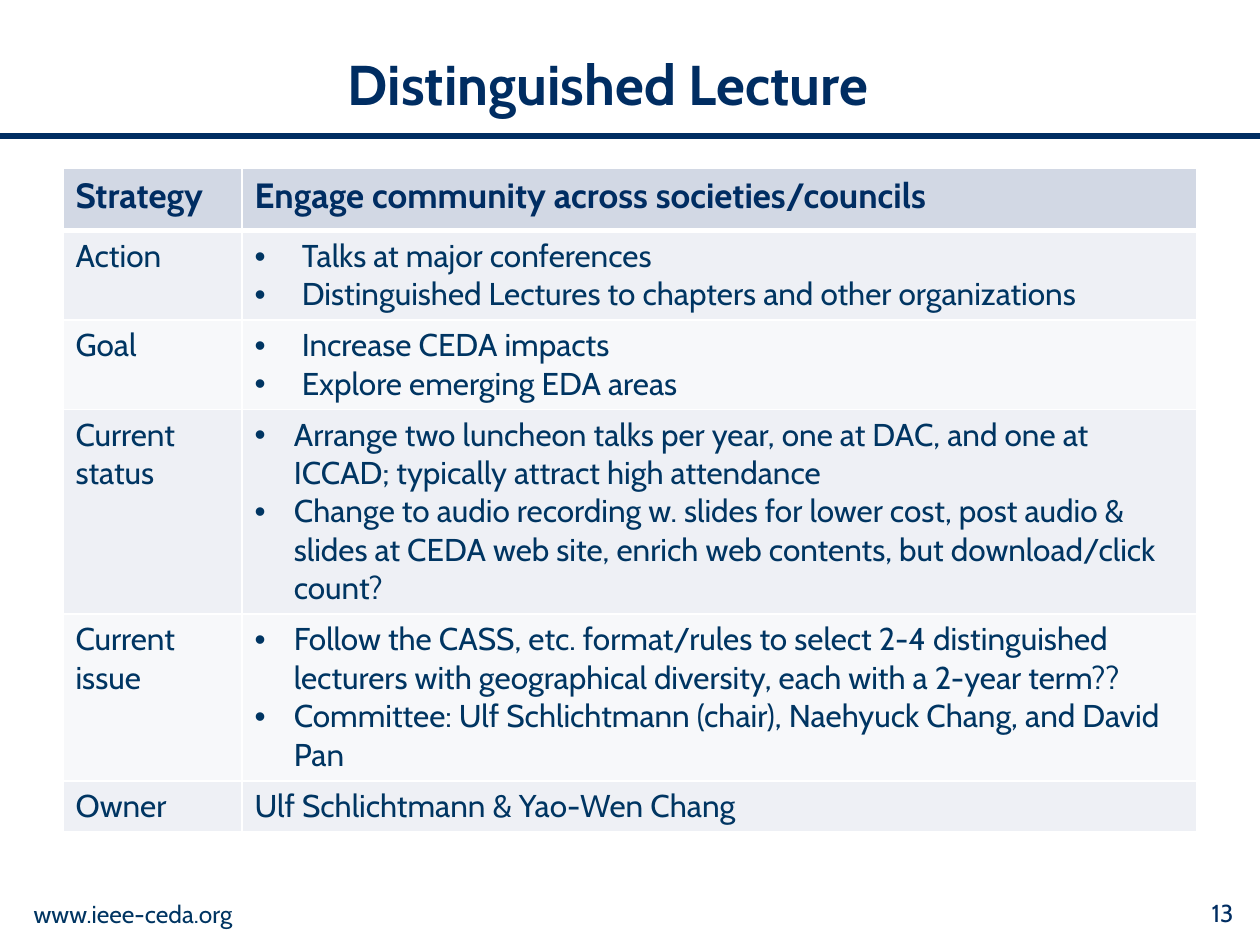
from lxml.etree import SubElement
from pptx import Presentation
from pptx.dml.color import RGBColor
from pptx.enum.shapes import MSO_CONNECTOR
from pptx.enum.text import MSO_ANCHOR, PP_ALIGN
from pptx.oxml.ns import qn
from pptx.util import Cm, Pt

NAVY = "002D62"
BLUE = "003562"
WHITE = "FFFFFF"
HEADER_FILL = "D2D8E4"
BAND_FILLS = ["EEF0F5", "F7F8FA"]
COL_WIDTHS = [3.61, 19.25]
ROW_HEIGHTS = [1.26, 1.8, 1.8, 4.13, 3.36, 1.03]
WIDE, NARROW = 0.95, 0.79

ROWS = [
    ("Strategy", ["Engage community across societies/councils"], None),
    ("Action", ["Talks at major conferences",
                "Distinguished Lectures to chapters and other organizations"], WIDE),
    ("Goal", ["Increase CEDA impacts", "Explore emerging EDA areas"], WIDE),
    ("Current status", [
        "Arrange two luncheon talks per year, one at DAC, and one at ICCAD; "
        "typically attract high attendance",
        "Change to audio recording w. slides for lower cost, post audio & slides "
        "at CEDA web site, enrich web contents, but download/click count?"], NARROW),
    ("Current issue", [
        "Follow the CASS, etc. format/rules to select 2-4 distinguished lecturers "
        "with geographical diversity, each with a 2-year term??",
        "Committee: Ulf Schlichtmann (chair), Naehyuck Chang, and David Pan"], NARROW),
    ("Owner", ["Ulf Schlichtmann & Yao-Wen Chang"], None),
]


def rgb(value):
    return RGBColor.from_string(value)


def format_runs(p, size, color, bold=False):
    for r in p.runs:
        r.font.name = "Cabin"
        r.font.size = Pt(size)
        r.font.bold = bold
        r.font.color.rgb = rgb(color)


def add_text(s, text, box, size, color, align=PP_ALIGN.LEFT, bold=False):
    tf = s.shapes.add_textbox(*(Cm(v) for v in box)).text_frame
    tf.word_wrap = True
    tf.vertical_anchor = MSO_ANCHOR.MIDDLE
    p = tf.paragraphs[0]
    p.text = text
    p.alignment = align
    format_runs(p, size, color, bold)


def add_rule(s, y, width, weight, color):
    line = s.shapes.add_connector(MSO_CONNECTOR.STRAIGHT, 0, Cm(y), Cm(width), Cm(y))
    line.line.color.rgb = rgb(color)
    line.line.width = Pt(weight)
    SubElement(line._element.spPr, qn("a:effectLst"))


def set_bullet(p, indent):
    pPr = p._p.get_or_add_pPr()
    pPr.set("marL", str(Cm(indent)))
    pPr.set("indent", str(-Cm(indent)))
    SubElement(pPr, qn("a:buFont"), typeface="Arial")
    SubElement(pPr, qn("a:buChar"), char="•")


def set_borders(cell, top, bottom):
    tcPr = cell._tc.get_or_add_tcPr()
    for side, weight in (("L", 1), ("R", 1), ("T", top), ("B", bottom)):
        ln = SubElement(tcPr, qn(f"a:ln{side}"), w=str(Pt(weight)))
        SubElement(SubElement(ln, qn("a:solidFill")), qn("a:srgbClr"), val=WHITE)


def fill_cell(cell, row, lines, indent=None):
    header = row == 0
    set_borders(cell, 3 if row == 1 else 1, 3 if header else 1)
    cell.fill.solid()
    cell.fill.fore_color.rgb = rgb(HEADER_FILL if header else BAND_FILLS[(row - 1) % 2])
    tf = cell.text_frame
    tf.text = "\n".join(lines)
    for p in tf.paragraphs:
        if indent:
            set_bullet(p, indent)
        format_runs(p, 20 if header else 18, NAVY if header else BLUE, header)


def add_strategy_table(s):
    table = s.shapes.add_table(len(ROWS), len(COL_WIDTHS), Cm(1.27), Cm(3.39),
                               Cm(sum(COL_WIDTHS)), Cm(sum(ROW_HEIGHTS))).table
    for col, width in zip(table.columns, COL_WIDTHS):
        col.width = Cm(width)
    for i, (label, lines, indent) in enumerate(ROWS):
        table.rows[i].height = Cm(ROW_HEIGHTS[i])
        fill_cell(table.cell(i, 0), i, [label])
        fill_cell(table.cell(i, 1), i, lines, indent)


def main():
    prs = Presentation()
    prs.slide_width, prs.slide_height = Cm(25.4), Cm(19.05)
    s = prs.slides.add_slide(prs.slide_layouts[6])
    add_rule(s, 2.74, 25.4, 3, NAVY)
    add_text(s, "Distinguished Lecture ", (1.47, 0.41, 21.84, 2.54), 32, NAVY,
             PP_ALIGN.CENTER, True)
    add_text(s, "13", (22.66, 17.98, 2.46, 0.84), 14, NAVY, PP_ALIGN.RIGHT)
    add_text(s, "www.ieee-ceda.org", (0.43, 17.98, 5.92, 0.89), 14, BLUE)
    add_strategy_table(s)
    prs.save("out.pptx")


if __name__ == "__main__":
    main()
